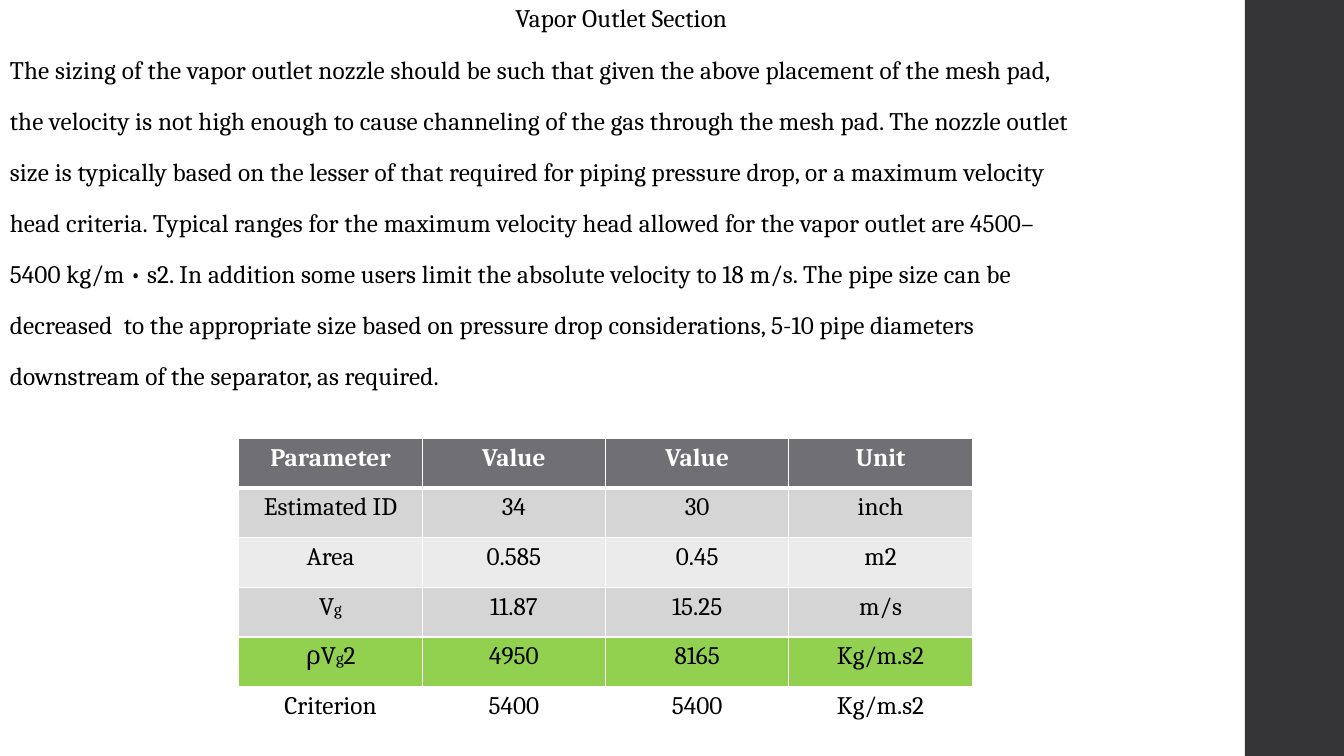
from dataclasses import dataclass

from lxml.etree import SubElement
from pptx import Presentation
from pptx.dml.color import RGBColor as RGB
from pptx.enum.shapes import MSO_SHAPE as SHAPE
from pptx.enum.text import PP_ALIGN as ALIGN
from pptx.oxml.ns import qn
from pptx.util import Cm, Pt

TITLE = "Vapor Outlet Section"
BODY = [
    "The sizing of the vapor outlet nozzle should be such that given the above placement of the mesh pad,",
    "the velocity is not high enough to cause channeling of the gas through the mesh pad. The nozzle outlet",
    "size is typically based on the lesser of that required for piping pressure drop, or a maximum velocity",
    "head criteria. Typical ranges for the maximum velocity head allowed for the vapor outlet are 4500–",
    "5400 kg/m • s2. In addition some users limit the absolute velocity to 18 m/s. The pipe size can be",
    "decreased  to the appropriate size based on pressure drop considerations, 5-10 pipe diameters",
    "downstream of the separator, as required.",
]
ROWS = [
    (["Parameter"], ["Value"], ["Value"], ["Unit"]),
    (["Estimated ID"], ["34"], ["30"], ["inch"]),
    (["Area"], ["0.585"], ["0.45"], ["m2"]),
    (["V", "g"], ["11.87"], ["15.25"], ["m/s"]),
    (["ρV", "g", "2"], ["4950"], ["8165"], ["Kg/m.s2"]),
    (["Criterion"], ["5400"], ["5400"], ["Kg/m.s2"]),
]


@dataclass(frozen=True)
class Theme:
    font: str = "Cambria"
    size: int = 18
    small: int = 12
    text: str = "000000"
    white: str = "FFFFFF"
    band: str = "353537"
    row_fills: tuple = ("6F6F74", "D5D5D6", "EBEBEB", "D5D5D6", "92D050", "FFFFFF")
    line: int = 1
    header_line: int = 3


T = Theme()
SLIDE_W, SLIDE_H = 33.87, 19.05
BAND_LEFT, BAND_W = 31.37, 2.54
TEXT_W = 31.32
TABLE_LEFT, TABLE_TOP = 6.02, 11.05
COL_W, ROW_H = 4.62, 1.25


def style(r, color, size=T.size, bold=False):
    r.font.name = T.font
    r.font.size = Pt(size)
    r.font.bold = bold
    r.font.color.rgb = RGB.from_string(color)


def add_borders(cell, top, bottom):
    tc_pr = cell._tc.get_or_add_tcPr()
    for side, width in (("L", T.line), ("R", T.line), ("T", top), ("B", bottom)):
        ln = SubElement(tc_pr, qn(f"a:ln{side}"), w=str(Pt(width)))
        fill = SubElement(ln, qn("a:solidFill"))
        SubElement(fill, qn("a:srgbClr"), val=T.white)


def add_band(slide):
    sp = slide.shapes.add_shape(SHAPE.RECTANGLE, Cm(BAND_LEFT), 0, Cm(BAND_W), Cm(SLIDE_H))
    sp.shadow.inherit = False
    sp.fill.solid()
    sp.fill.fore_color.rgb = RGB.from_string(T.band)
    sp.line.fill.background()


def add_text(slide):
    tf = slide.shapes.add_textbox(0, 0, Cm(TEXT_W), Cm(SLIDE_H)).text_frame
    tf.word_wrap = True
    tf.text = "\n".join([TITLE, *BODY])
    for p in tf.paragraphs:
        p.line_spacing = 0.95
        p.space_before, p.space_after = Pt(14), Pt(2)
        for r in p.runs:
            style(r, T.text)
            r.font._element.set("spc", "10")
    tf.paragraphs[0].alignment = ALIGN.CENTER


def fill_cell(cell, parts, row):
    header = row == 0
    p = cell.text_frame.paragraphs[0]
    p.alignment = ALIGN.CENTER
    for part in parts:
        r = p.add_run()
        r.text = part
        style(r, T.white if header else T.text, T.small if part == "g" else T.size, header)
    add_borders(cell, T.header_line if row == 1 else T.line, T.header_line if header else T.line)
    cell.fill.solid()
    cell.fill.fore_color.rgb = RGB.from_string(T.row_fills[row])


def add_sizing_table(slide):
    n_rows, n_cols = len(ROWS), len(ROWS[0])
    table = slide.shapes.add_table(
        n_rows, n_cols, Cm(TABLE_LEFT), Cm(TABLE_TOP), Cm(COL_W * n_cols), Cm(ROW_H * n_rows)
    ).table
    for col in table.columns:
        col.width = Cm(COL_W)
    for i, row in enumerate(ROWS):
        table.rows[i].height = Cm(ROW_H)
        for j, parts in enumerate(row):
            fill_cell(table.cell(i, j), parts, i)


def main():
    prs = Presentation()
    prs.slide_width, prs.slide_height = Cm(SLIDE_W), Cm(SLIDE_H)
    slide = prs.slides.add_slide(prs.slide_layouts[6])
    add_band(slide)
    add_text(slide)
    add_sizing_table(slide)
    prs.save("out.pptx")


if __name__ == "__main__":
    main()
